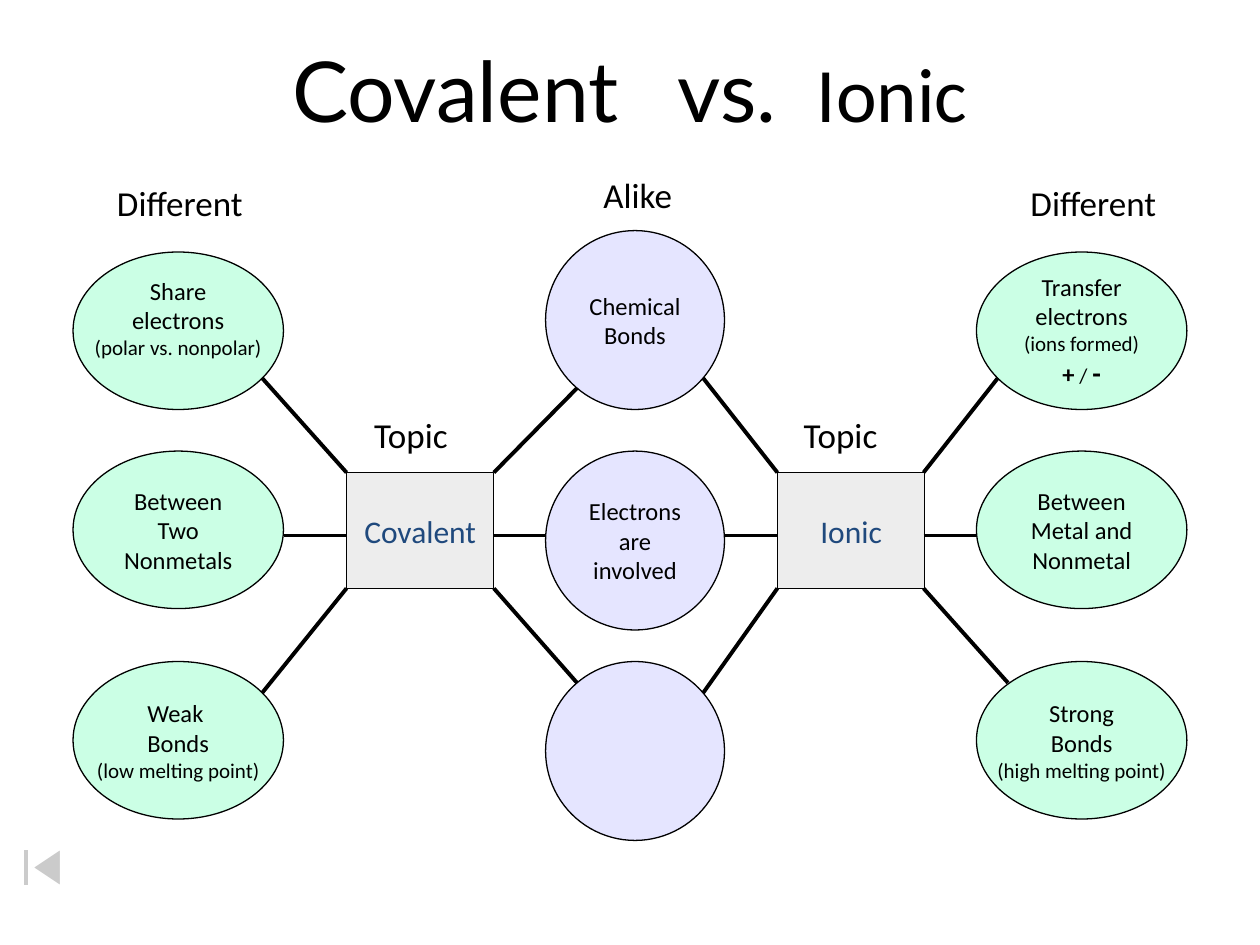
import dataclasses

import lxml.etree
import pptx
import pptx.dml.color
import pptx.enum.shapes
import pptx.enum.text
import pptx.oxml.ns
import pptx.util

Inches = pptx.util.Inches
Shape = pptx.enum.shapes.MSO_SHAPE
Align = pptx.enum.text.PP_ALIGN
Anchor = pptx.enum.text.MSO_ANCHOR


@dataclasses.dataclass(frozen=True)
class Theme:
    """Colours, fonts, type sizes and line widths of the slide."""
    ink: str = "000000"
    topic_ink: str = "1F497D"
    topic_fill: str = "DDDDDD"
    different_fill: str = "99FFCC"
    alike_fill: str = "CCCCFF"
    button_fill: str = "FFFFFF"
    font: str = "Calibri"
    title_font: str = "Lato"
    title: int = 48
    title_end: int = 44
    heading: int = 20
    topic: int = 18
    sign: int = 16
    body: int = 14
    note: int = 12
    outline: float = 0.75
    spoke: float = 2.25
    opacity: int = 50


THEME = Theme()


@dataclasses.dataclass(frozen=True)
class Span:
    """One run of text and its look."""
    text: str
    size: int = THEME.body
    bold: bool = False
    color: str = THEME.ink
    font: str = THEME.font
    tracking: float = 0


def rgb(value):
    """Return a colour from its hex value."""
    return pptx.dml.color.RGBColor.from_string(value)


def write(box, lines, align=Align.CENTER, anchor=Anchor.MIDDLE, wrap=False):
    """Fill a shape with lines, each a sequence of spans."""
    frame = box.text_frame
    frame.word_wrap = wrap
    frame.vertical_anchor = anchor
    for index, spans in enumerate(lines):
        para = frame.add_paragraph() if index else frame.paragraphs[0]
        para.alignment = align
        for span in spans:
            run = para.add_run()
            run.text = span.text
            run.font.size = pptx.util.Pt(span.size)
            run.font.bold = span.bold
            run.font.name = span.font
            run.font.color.rgb = rgb(span.color)
            if span.tracking:
                run.font._element.set("spc", str(round(span.tracking * 100)))


def add_node(page, kind, place, fill, lines=(), outline=THEME.ink):
    """Add a half-transparent outlined shape with centred text."""
    node = page.shapes.add_shape(kind, *map(Inches, place))
    node.shadow.inherit = False
    node.fill.solid()
    node.fill.fore_color.rgb = rgb(fill)
    color = node.fill._xPr.find(".//" + pptx.oxml.ns.qn("a:srgbClr"))
    alpha = lxml.etree.SubElement(color, pptx.oxml.ns.qn("a:alpha"))
    alpha.set("val", str(THEME.opacity * 1000))
    node.line.color.rgb = rgb(outline)
    node.line.width = pptx.util.Pt(THEME.outline)
    write(node, lines)
    return node


def add_title(page):
    """Add the title, with wide gaps around its middle word."""
    box = page.shapes.add_textbox(*map(Inches, (0.75, 0.08, 8.5, 1.25)))
    look = {"size": THEME.title, "font": THEME.title_font}
    spans = (
        Span("Covalent", **look),
        Span(" ", tracking=21.6, **look),
        Span("vs.", **look),
        Span(" ", tracking=10.8, **look),
        Span("Ionic", THEME.title_end),
    )
    write(box, [spans], wrap=True)


def add_heading(page, text, left, top, width):
    """Add a left-aligned heading above a column or topic."""
    box = page.shapes.add_textbox(*map(Inches, (left, top, width, 0.43)))
    write(box, [[Span(text, THEME.heading)]], Align.LEFT, Anchor.TOP)


def add_spoke(page, start, end):
    """Add a straight line between two points."""
    line = page.shapes.add_connector(
        pptx.enum.shapes.MSO_CONNECTOR.STRAIGHT, *map(Inches, (*start, *end)))
    line.line.color.rgb = rgb(THEME.ink)
    line.line.width = pptx.util.Pt(THEME.spoke)
    lxml.etree.SubElement(line._element.spPr, pptx.oxml.ns.qn("a:effectLst"))


def add_column(page, left, tops, size, fill, texts):
    """Add a column of ellipses and return them."""
    return [add_node(page, Shape.OVAL, (left, top, *size), fill, lines)
            for top, lines in zip(tops, texts)]


def plain(*words):
    """Return one body line for each text."""
    return [[Span(word)] for word in words]


def note(text):
    """Return one small line."""
    return [Span(text, THEME.note)]


def add_columns(page):
    """Add the two outer columns and the shared middle column."""
    signs = [Span("+", bold=True), Span(" / ", THEME.note),
             Span("-", THEME.sign, bold=True)]
    covalent = (
        plain("Share", "electrons") + [note("(polar vs. nonpolar)")],
        plain("Between", "Two", "Nonmetals"),
        plain("Weak ", "Bonds") + [note("(low melting point)")],
    )
    ionic = (
        plain("Transfer", "electrons") + [note("(ions formed)"), signs],
        plain("Between", "Metal and", "Nonmetal"),
        plain("Strong", "Bonds") + [note("(high melting point)")],
    )
    alike = (plain("Chemical", "Bonds"),
             plain("Electrons", "are", "involved"), ())
    outer = ((2, 3.58, 5.25), (1.67, 1.25), THEME.different_fill)
    share = add_column(page, 0.58, *outer, covalent)[0]
    share.text_frame.margin_bottom = Inches(0.25)
    add_column(page, 7.75, *outer, ionic)
    add_column(page, 4.33, (1.83, 3.58, 5.25), (1.42, 1.42),
               THEME.alike_fill, alike)


def add_topics(page):
    """Add the two topic boxes with their headings."""
    for text, left, heading_left in (("Covalent", 2.75, 2.87),
                                     ("Ionic", 6.17, 6.28)):
        label = [[Span(text, THEME.topic, color=THEME.topic_ink)]]
        add_node(page, Shape.RECTANGLE, (left, 3.75, 1.17, 0.92),
                 THEME.topic_fill, label)
        add_heading(page, "Topic", heading_left, 3.23, 0.88)


def add_spokes(page):
    """Join each side of the topic boxes to its three ellipses."""
    fans = {
        2.75: ((2.08, 3), (2.25, 4.25), (2.08, 5.5)),
        3.92: ((4.58, 3.08), (4.33, 4.25), (4.58, 5.42)),
        6.17: ((5.58, 3), (5.75, 4.25), (5.58, 5.5)),
        7.33: ((7.92, 3), (7.75, 4.25), (8, 5.42)),
    }
    for side, tips in fans.items():
        for level, tip in zip((3.75, 4.25, 4.67), tips):
            add_spoke(page, (side, level), tip)


def main():
    """Build the comparison slide and save it."""
    deck = pptx.Presentation()
    deck.slide_width, deck.slide_height = Inches(10), Inches(7.5)
    page = deck.slides.add_slide(deck.slide_layouts[6])
    add_title(page)
    add_columns(page)
    add_topics(page)
    add_heading(page, "Different", 0.83, 1.39, 1.25)
    add_heading(page, "Alike", 4.69, 1.33, 0.81)
    add_heading(page, "Different", 8.08, 1.39, 1.25)
    add_spokes(page)
    add_node(page, Shape.ACTION_BUTTON_BEGINNING, (0, 6.69, 0.67, 0.39),
             THEME.button_fill, outline=THEME.button_fill)
    deck.save("out.pptx")


if __name__ == "__main__":
    main()
